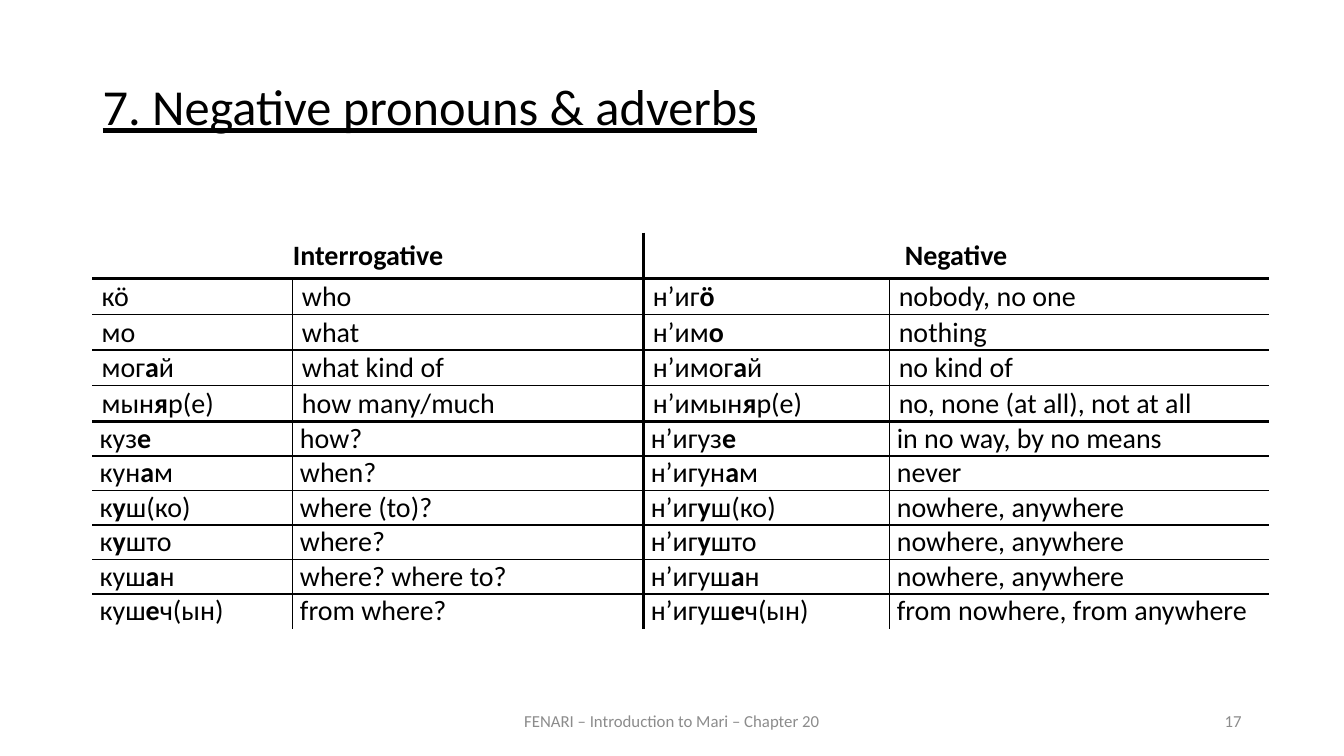
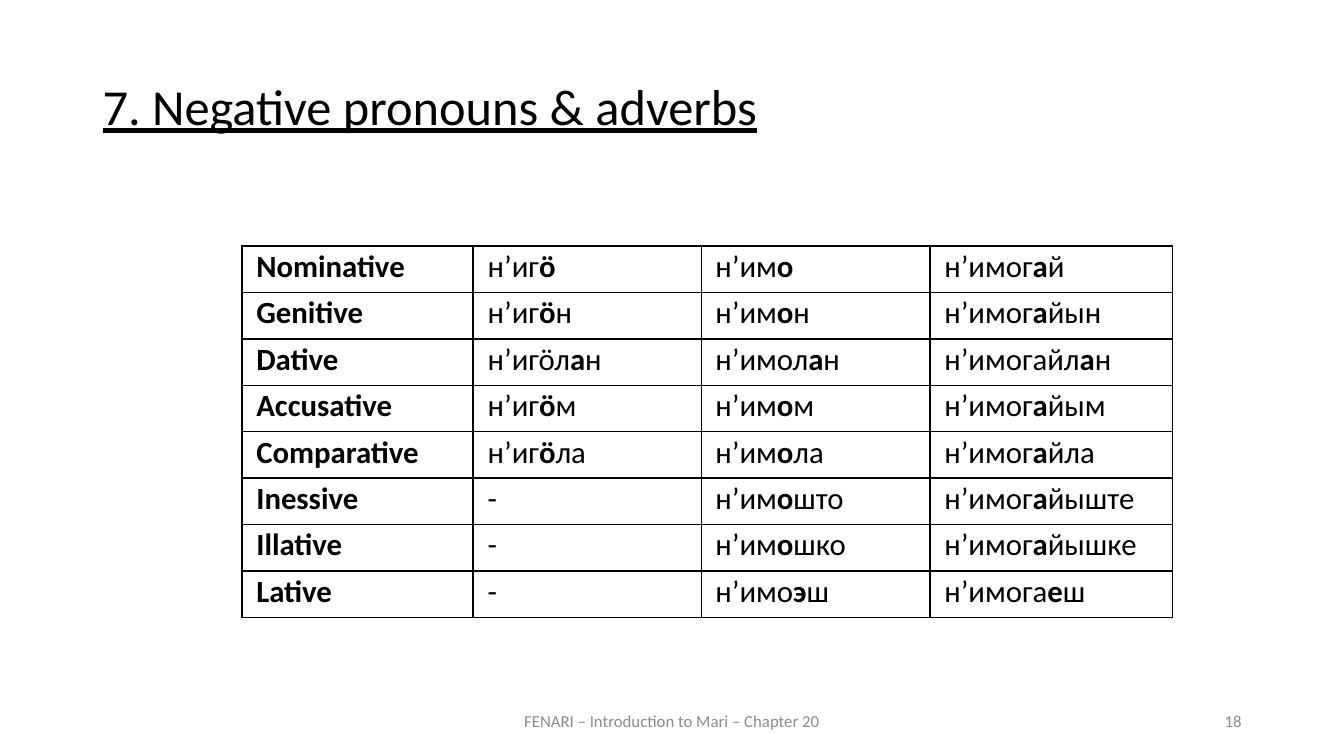
import pptx
import pptx.dml.color
import pptx.enum.text
import pptx.oxml
import pptx.oxml.ns
import pptx.util

Cm = pptx.util.Cm
Pt = pptx.util.Pt
ALIGN = pptx.enum.text.PP_ALIGN
ANCHOR = pptx.enum.text.MSO_ANCHOR

# Shared style and wording
FONT = "Calibri"
INK = "000000"
FOOTER_GREY = "8C8C8C"
HEADING = "7. Negative pronouns & adverbs"
FOOTER = "FENARI – Introduction to Mari – Chapter 20"
FIRST_NUMBER = 17


def colour(hex_value):
    return pptx.dml.color.RGBColor.from_string(hex_value)


def write(frame, text, size, align, ink=INK, underline=None):
    """Fill the first paragraph; parts between asterisks are bold."""
    paragraph = frame.paragraphs[0]
    paragraph.alignment = align
    for index, part in enumerate(text.split("*")):
        if part:
            run = paragraph.add_run()
            run.text = part
            run.font.name = FONT
            run.font.size = Pt(size)
            run.font.bold = index % 2 == 1
            run.font.underline = underline
            run.font.color.rgb = colour(ink)
    return paragraph


# Row formats: height, side inset, top inset, bottom inset (cm), anchor, alignment
HEADER = (1.16, 0.3, 0.15, 0.15, ANCHOR.TOP, ALIGN.CENTER)
PRONOUN = (0.9, 0.23, 0.02, 0, ANCHOR.MIDDLE, ALIGN.LEFT)
ADVERB = (0.87, 0.18, 0, 0, ANCHOR.MIDDLE, ALIGN.LEFT)
CASE = (1.17, 0.36, 0.05, 0, ANCHOR.TOP, ALIGN.JUSTIFY)

# Tables: rules are line widths in points, from left to right and top to bottom
negatives = {
    "left": 2.33, "top": 5.86, "size": 20,
    "widths": [5.05, 8.84, 6.2, 9.55],
    "formats": [HEADER] + [PRONOUN] * 4 + [ADVERB] * 6,
    "upright_rules": [0, 1, 2.25, 1, 0],
    "level_rules": [0, 2.25, 1, 1, 1, 2.25, 1, 1, 1, 1, 1, 0],
    "merges": [(0, 0, 1), (0, 2, 3)],
    "rows": [
        ["*Interrogative*", "", "*Negative*", ""],
        ["кӧ", "who", "н’иг*ӧ*", "nobody, no one"],
        ["мо", "what", "н’им*о*", "nothing"],
        ["мог*а*й", "what kind of", "н’имог*а*й", "no kind of"],
        ["мын*я*р(е)", "how many/much", "н’имын*я*р(е)", "no, none (at all), not at all"],
        ["куз*е*", "how?", "н’игуз*е*", "in no way, by no means"],
        ["кун*а*м", "when?", "н’игун*а*м", "never"],
        ["к*у*ш(ко)", "where (to)?", "н’иг*у*ш(ко)", "nowhere, anywhere"],
        ["к*у*што", "where?", "н’иг*у*што", "nowhere, anywhere"],
        ["куш*а*н", "where? where to?", "н’игуш*а*н", "nowhere, anywhere"],
        ["куш*е*ч(ын)", "from where?", "н’игуш*е*ч(ын)", "from nowhere, from anywhere"],
    ],
}
declension = {
    "left": 6.1, "top": 6.2, "size": 22,
    "widths": [5.83, 5.74, 5.77, 6.1],
    "formats": [CASE] * 8,
    "upright_rules": [1.5, 1.5, 1, 1, 1],
    "level_rules": [1.5, 1, 1, 1, 1, 1.5, 1, 1, 1.5],
    "merges": [],
    "rows": [
        ["*Nominative*", "н’иг*ӧ*", "н’им*о*", "н’имог*а*й"],
        ["*Genitive*", "н’иг*ӧ*н", "н’им*о*н", "н’имог*а*йын"],
        ["*Dative*", "н’игӧл*а*н", "н’имол*а*н", "н’имогайл*а*н"],
        ["*Accusative*", "н’иг*ӧ*м", "н’им*о*м", "н’имог*а*йым"],
        ["*Comparative*", "н’иг*ӧ*ла", "н’им*о*ла", "н’имог*а*йла"],
        ["*Inessive*", "-", "н’им*о*што", "н’имог*а*йыште"],
        ["*Illative*", "-", "н’им*о*шко", "н’имог*а*йышке"],
        ["*Lative*", "-", "н’имо*э*ш", "н’имога*е*ш"],
    ],
}

deck = pptx.Presentation()
deck.slide_width = Cm(33.87)
deck.slide_height = Cm(19.05)

for number, content in enumerate([negatives, declension], FIRST_NUMBER):
    slide = deck.slides.add_slide(deck.slide_layouts[5])

    # Title
    title = slide.shapes.title
    title.left, title.top, title.width, title.height = Cm(2.33), Cm(1.93), Cm(29.21), Cm(2.11)
    title.text_frame.word_wrap = True
    title.text_frame.auto_size = pptx.enum.text.MSO_AUTO_SIZE.NONE
    title.text_frame.vertical_anchor = ANCHOR.TOP
    heading = write(title.text_frame, HEADING, 36, ALIGN.JUSTIFY, underline=True)
    heading.line_spacing = 0.9
    heading.space_before = Pt(12)

    # Footer and slide number
    for left, width, text, align in [
        (11.22, 11.43, FOOTER, ALIGN.CENTER),
        (23.92, 7.62, str(number), ALIGN.RIGHT),
    ]:
        footer = slide.shapes.add_textbox(Cm(left), Cm(17.65), Cm(width), Cm(1.02))
        footer.text_frame.word_wrap = True
        footer.text_frame.vertical_anchor = ANCHOR.MIDDLE
        write(footer.text_frame, text, 12, align, FOOTER_GREY)

    # Table grid
    rows, widths, formats = content["rows"], content["widths"], content["formats"]
    table = slide.shapes.add_table(
        len(rows), len(widths), Cm(content["left"]), Cm(content["top"]),
        Cm(sum(widths)), Cm(sum(row_format[0] for row_format in formats)),
    ).table
    table.first_row = False
    table.horz_banding = False
    for column, width in zip(table.columns, widths):
        column.width = Cm(width)
    for row, first, last in content["merges"]:
        table.cell(row, first).merge(table.cell(row, last))

    # Table cells
    upright, level = content["upright_rules"], content["level_rules"]
    for r, (texts, row_format) in enumerate(zip(rows, formats)):
        height, side, above, below, anchor, align = row_format
        table.rows[r].height = Cm(height)
        for c, text in enumerate(texts):
            cell = table.cell(r, c)
            if cell.is_spanned:
                cell.fill.background()
                continue
            cell.margin_left = cell.margin_right = Cm(side)
            cell.margin_top, cell.margin_bottom = Cm(above), Cm(below)
            cell.vertical_anchor = anchor
            write(cell.text_frame, text, content["size"], align)

            # Borders go before the fill in the cell properties
            span = cell.span_width if cell.is_merge_origin else 1
            borders = {"L": upright[c], "R": upright[c + span], "T": level[r], "B": level[r + 1]}
            for edge, points in borders.items():
                paint = f'<a:solidFill><a:srgbClr val="{INK}"/></a:solidFill>' if points else "<a:noFill/>"
                cell._tc.get_or_add_tcPr().append(pptx.oxml.parse_xml(
                    f'<a:ln{edge} {pptx.oxml.ns.nsdecls("a")} w="{Pt(points)}">{paint}</a:ln{edge}>'
                ))
            cell.fill.background()

deck.save("out.pptx")
